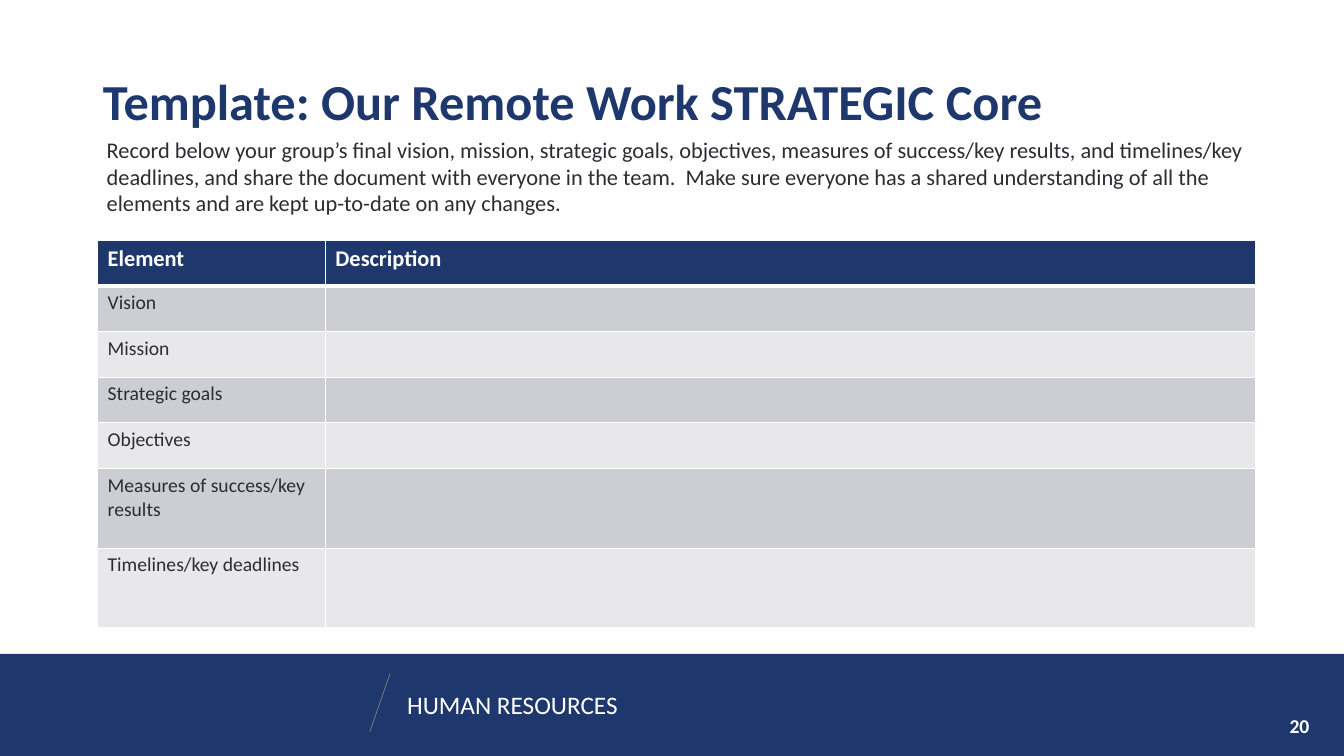
from lxml import etree
from pptx import Presentation
from pptx.dml.color import RGBColor
from pptx.enum.shapes import MSO_CONNECTOR as CONN, MSO_SHAPE as SHAPE
from pptx.enum.text import MSO_ANCHOR as ANCHOR, PP_ALIGN as ALIGN
from pptx.oxml.ns import qn
from pptx.util import Cm, Pt

COLORS = {"navy": "1E376C", "white": "FFFFFF", "ink": "2C2C33",
          "slash": "7E7E7C", "band_dark": "CDCED4", "band_light": "E8E8EB"}
FONT = "Calibri"
ELEMENTS = ["Vision", "Mission", "Strategic goals", "Objectives",
            "Measures of success/key results", "Timelines/key deadlines"]
INTRO = ("Record below your group’s final vision, mission, strategic goals, "
         "objectives, measures of success/key results, and timelines/key "
         "deadlines, and share the document with everyone in the team.  Make "
         "sure everyone has a shared understanding of all the elements and "
         "are kept up-to-date on any changes.")


def rgb(name):
    """Return the named colour."""
    return RGBColor.from_string(COLORS[name])


def write(tf, text, size, color, bold=False, align=ALIGN.LEFT):
    """Fill a text frame with one formatted paragraph."""
    tf.word_wrap = True
    tf.text = text
    p = tf.paragraphs[0]
    p.alignment = align
    for r in p.runs:
        r.font.name, r.font.size, r.font.bold = FONT, Pt(size), bold
        r.font.color.rgb = rgb(color)
    return p


def add_text(s, box, *args, **kwargs):
    """Add a text box holding one paragraph."""
    tf = s.shapes.add_textbox(*map(Cm, box)).text_frame
    write(tf, *args, **kwargs)
    return tf


def add_footer(s, box):
    """Draw the footer band with its slash, department and page number."""
    x, y, w, h = box
    band = s.shapes.add_shape(SHAPE.RECTANGLE, *map(Cm, box))
    band.shadow.inherit = False
    band.fill.solid()
    band.fill.fore_color.rgb = rgb("navy")
    band.line.fill.background()
    add_text(s, (x + 10.01, y + 0.77, 8.76, 1.02), "HUMAN RESOURCES", 18, "white")
    slash = s.shapes.add_connector(CONN.STRAIGHT, Cm(x + 9.32), Cm(y + 1.96),
                                   Cm(x + 9.83), Cm(y + 0.49))
    slash.line.color.rgb = rgb("slash")
    slash.line.width = Pt(0.5)
    etree.SubElement(slash._element.spPr, qn("a:effectLst"))
    tf = add_text(s, (x + w - 4.05, y + 1.3, 3.43, 1.02), "20", 14, "white",
                  bold=True, align=ALIGN.RIGHT)
    tf.vertical_anchor = ANCHOR.MIDDLE


def add_heading(s, box):
    """Place the title and the introduction under it."""
    x, y, w, h = box
    title = s.shapes.title
    title.left, title.top, title.width, title.height = map(Cm, (x, y, w, 3.23))
    tf = title.text_frame
    p = write(tf, "Template: Our Remote Work STRATEGIC Core", 36, "navy", bold=True)
    p.line_spacing = 0.9
    tf.vertical_anchor = ANCHOR.MIDDLE
    add_text(s, (x + 0.1, y + 2.28, w, h - 2.28), INTRO, 16, "ink")


def set_borders(cell, top, bottom):
    """Give a cell white borders of the stated widths in points."""
    tcPr = cell._tc.get_or_add_tcPr()
    for side, width in zip("LRTB", (1, 1, top, bottom)):
        ln = etree.SubElement(tcPr, qn(f"a:ln{side}"), w=str(Pt(width)))
        fill = etree.SubElement(ln, qn("a:solidFill"))
        etree.SubElement(fill, qn("a:srgbClr"), val=COLORS["white"])


def add_elements_table(s, box):
    """Add the banded table of strategic elements."""
    x, y, w, h = box
    rows = [("Element", "Description")] + [(name, "") for name in ELEMENTS]
    table = s.shapes.add_table(len(rows), 2, *map(Cm, box)).table
    table.columns[0].width, table.columns[1].width = Cm(5.74), Cm(w - 5.74)
    tall = 2.01
    short = (h - 2 * tall) / 5
    for i, texts in enumerate(rows):
        table.rows[i].height = Cm(short if i < 5 else tall)
        fill = "navy" if i == 0 else "band_dark" if i % 2 else "band_light"
        size, color = (16, "white") if i == 0 else (14, "ink")
        for j, text in enumerate(texts):
            cell = table.cell(i, j)
            set_borders(cell, 3 if i == 1 else 1, 3 if i == 0 else 1)
            cell.fill.solid()
            cell.fill.fore_color.rgb = rgb(fill)
            if text:
                write(cell.text_frame, text, size, color, bold=i == 0)


def main():
    """Build and save the slide."""
    prs = Presentation()
    prs.slide_width, prs.slide_height = Cm(33.87), Cm(19.05)
    s = prs.slides.add_slide(prs.slide_layouts[5])
    add_footer(s, (0, 16.48, 33.87, 2.57))
    add_heading(s, (2.34, 1.02, 29.2, 4.59))
    add_elements_table(s, (2.46, 6.05, 29.18, 9.78))
    prs.save("out.pptx")


if __name__ == "__main__":
    main()
